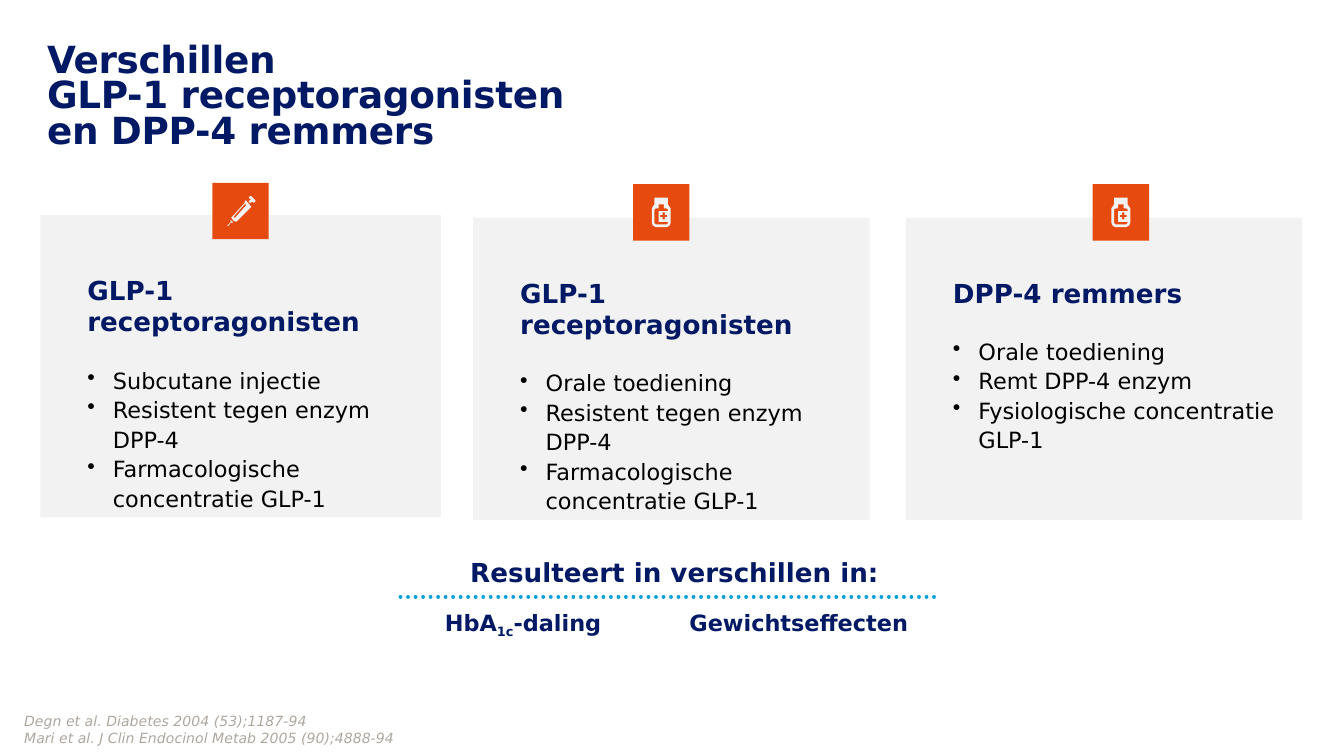
from copy import deepcopy
from dataclasses import dataclass

from lxml.etree import SubElement
from pptx import Presentation
from pptx.dml.color import RGBColor
from pptx.enum.dml import MSO_LINE
from pptx.enum.shapes import MSO_CONNECTOR, MSO_SHAPE
from pptx.enum.text import MSO_ANCHOR, PP_ALIGN
from pptx.oxml.ns import qn
from pptx.util import Inches, Pt

NAVY = RGBColor(0x00, 0x19, 0x65)
ORANGE = RGBColor(0xE6, 0x4A, 0x0E)
LIGHT_GREY = RGBColor(0xF2, 0xF2, 0xF2)
FOOTNOTE_GREY = RGBColor(0xAE, 0xA7, 0x9F)
BLUE = RGBColor(0x00, 0x9F, 0xDA)
BLACK = RGBColor(0x00, 0x00, 0x00)
FONT = "DejaVu Sans"
SLIDE_WIDTH = 10
SLIDE_HEIGHT = SLIDE_WIDTH * 9 / 16
CARD_HEIGHT = 2.25
TILE_SIZE = 0.42

Contour = list[tuple[float, float]]
Icon = list[list[Contour]]

# Icon outlines in hundredths of an inch from the tile's corner;
# each icon is a list of shapes, each shape a list of contours
BOTTLE: Icon = [[
    [(16, 10), (16, 15), (14, 18), (14, 29), (15, 31), (17, 32), (25, 32),
     (27, 31), (28, 29), (28, 18), (26, 15), (26, 10)],
    [(17, 30), (16, 29), (16, 19), (17, 18), (19, 18), (19, 15), (23, 15),
     (23, 18), (25, 18), (26, 19), (26, 20), (19, 20), (19, 28), (26, 28),
     (26, 29), (25, 30)],
    [(20.2, 24.5), (20.2, 22.8), (22, 22.8), (22, 21), (23.7, 21),
     (23.7, 22.8), (25.4, 22.8), (25.4, 24.5), (23.7, 24.5), (23.7, 26.2),
     (22, 26.2), (22, 24.5)],
]]
SYRINGE: Icon = [
    [[(29, 18), (25, 13), (24, 14), (24, 15), (15, 25), (14, 26), (16, 28.5),
      (18, 29), (28, 19)],
     [(16, 26), (17, 26), (25, 17), (25, 16), (24, 16), (16, 25)]],
    [[(28, 12), (29, 12), (27, 14), (28, 15), (30, 14), (31, 15), (32, 14),
      (32, 13), (29, 10), (28, 10), (27, 11)]],
    [[(15, 29), (14, 28), (13, 28), (14, 29), (11, 32), (12, 32), (14, 29.5),
      (15, 30)]],
]


@dataclass
class Card:
    left: float
    top: float
    width: float
    heading: str
    points: list[str]
    icon: Icon
    tile_left: float
    tile_top: float


CARDS = [
    Card(0.3, 1.6, 2.98, "GLP-1 receptoragonisten",
         ["Subcutane injectie", "Resistent tegen enzym DPP-4",
          "Farmacologische concentratie GLP-1"], SYRINGE, 1.58, 1.36),
    Card(3.52, 1.62, 2.95, "GLP-1 receptoragonisten",
         ["Orale toediening", "Resistent tegen enzym DPP-4",
          "Farmacologische concentratie GLP-1"], BOTTLE, 4.71, 1.37),
    Card(6.74, 1.62, 2.95, "DPP-4 remmers",
         ["Orale toediening", "Remt DPP-4 enzym",
          "Fysiologische concentratie GLP-1"], BOTTLE, 8.13, 1.37),
]


def format_runs(paragraph, size: float, color: RGBColor, bold=False, italic=False) -> None:
    for run in paragraph.runs:
        run.font.name = FONT
        run.font.size = Pt(size)
        run.font.bold = bold
        run.font.italic = italic
        run.font.color.rgb = color


def set_margins(text_frame, left=0.0, top=0.0, right=0.0, bottom=0.0) -> None:
    text_frame.word_wrap = True
    text_frame.margin_left, text_frame.margin_top = Inches(left), Inches(top)
    text_frame.margin_right, text_frame.margin_bottom = Inches(right), Inches(bottom)


def add_text(slide, left: float, top: float, width: float, height: float, text: str):
    shape = slide.shapes.add_textbox(Inches(left), Inches(top), Inches(width), Inches(height))
    set_margins(shape.text_frame)
    shape.text_frame.text = text
    return shape.text_frame


def paint(shape, color: RGBColor) -> None:
    shape.fill.solid()
    shape.fill.fore_color.rgb = color
    shape.line.fill.background()
    shape.shadow.inherit = False


def add_rectangle(shapes, left: float, top: float, width: float, height: float, color: RGBColor):
    shape = shapes.add_shape(MSO_SHAPE.RECTANGLE, Inches(left), Inches(top),
                             Inches(width), Inches(height))
    paint(shape, color)
    return shape


def add_bullet(paragraph) -> None:
    properties = paragraph._p.get_or_add_pPr()
    properties.set("marL", str(Inches(0.19)))
    properties.set("indent", str(-Inches(0.19)))
    SubElement(properties, qn("a:buChar")).set("char", "•")


def add_icon(slide, icon: Icon, left: float, top: float) -> None:
    group = slide.shapes.add_group_shape()
    add_rectangle(group.shapes, left, top, TILE_SIZE, TILE_SIZE, ORANGE)
    for contours in icon:
        placed = [[(Inches(left + x / 100), Inches(top + y / 100)) for x, y in contour]
                  for contour in contours]
        builder = group.shapes.build_freeform(*placed[0][0])
        builder.add_line_segments(placed[0][1:], close=True)
        for contour in placed[1:]:
            builder.move_to(*contour[0])
            builder.add_line_segments(contour[1:], close=True)
        paint(builder.convert_to_shape(), LIGHT_GREY)


def add_card(slide, card: Card) -> None:
    shape = add_rectangle(slide.shapes, card.left, card.top, card.width, CARD_HEIGHT, LIGHT_GREY)
    text_frame = shape.text_frame
    set_margins(text_frame, 0.35, 0.44, 0.2, 0)
    text_frame.vertical_anchor = MSO_ANCHOR.TOP
    text_frame.text = "\n".join([card.heading, *card.points])
    heading, *points = text_frame.paragraphs
    heading.alignment = PP_ALIGN.LEFT
    heading.space_after = Pt(14.5)
    format_runs(heading, 14, NAVY, bold=True)
    for paragraph in points:
        paragraph.alignment = PP_ALIGN.LEFT
        paragraph.line_spacing = 1.1
        add_bullet(paragraph)
        format_runs(paragraph, 12, BLACK)
    add_icon(slide, card.icon, card.tile_left, card.tile_top)


def add_title(slide) -> None:
    title = slide.shapes.title
    title.left, title.top = Inches(0.35), Inches(0.33)
    title.width, title.height = Inches(8.72), Inches(0.71)
    set_margins(title.text_frame)
    title.text_frame.vertical_anchor = MSO_ANCHOR.TOP
    title.text_frame.text = "Verschillen\vGLP-1 receptoragonisten\ven DPP-4 remmers"
    paragraph = title.text_frame.paragraphs[0]
    paragraph.alignment = PP_ALIGN.LEFT
    paragraph.line_spacing = 0.8
    format_runs(paragraph, 20, NAVY, bold=True)
    for run in paragraph.runs:
        run._r.rPr.set("spc", "-20")
    # Line breaks take the size of the text around them
    for line_break in paragraph._p.findall(qn("a:br")):
        line_break.append(deepcopy(paragraph.runs[0]._r.rPr))


def add_conclusion(slide) -> None:
    text_frame = add_text(slide, 2.99, 4.13, 4.06, 0.25, "Resulteert in verschillen in:")
    text_frame.vertical_anchor = MSO_ANCHOR.MIDDLE
    text_frame.paragraphs[0].alignment = PP_ALIGN.CENTER
    format_runs(text_frame.paragraphs[0], 14, NAVY, bold=True)

    # Dotted rule
    line = slide.shapes.add_connector(MSO_CONNECTOR.STRAIGHT, Inches(2.98), Inches(4.44),
                                      Inches(6.98), Inches(4.44))
    line.line.color.rgb = BLUE
    line.line.width = Pt(2)
    line.line.dash_style = MSO_LINE.ROUND_DOT
    properties = line._element.spPr
    properties.find(qn("a:ln")).set("cap", "rnd")
    SubElement(properties, qn("a:effectLst"))

    # Two outcomes, set apart by a tab stop
    paragraph = add_text(slide, 3.31, 4.53, 3.7, 0.2, "").paragraphs[0]
    tabs = SubElement(paragraph._p.get_or_add_pPr(), qn("a:tabLst"))
    tab = SubElement(tabs, qn("a:tab"))
    tab.set("pos", str(Inches(1.82)))
    tab.set("algn", "l")
    for text in ("HbA", "1c", "-daling\tGewichtseffecten"):
        paragraph.add_run().text = text
    format_runs(paragraph, 12, NAVY, bold=True)
    paragraph.runs[1]._r.rPr.set("baseline", "-25000")


def main() -> None:
    presentation = Presentation()
    presentation.slide_width = Inches(SLIDE_WIDTH)
    presentation.slide_height = Inches(SLIDE_HEIGHT)
    slide = presentation.slides.add_slide(presentation.slide_layouts[5])
    add_title(slide)
    for card in CARDS:
        add_card(slide, card)
    add_conclusion(slide)

    # References
    references = add_text(slide, 0.18, 5.3, 9, 0.25,
                          "Degn et al. Diabetes 2004 (53);1187-94\n"
                          "Mari et al. J Clin Endocinol Metab 2005 (90);4888-94")
    for paragraph in references.paragraphs:
        format_runs(paragraph, 7.5, FOOTNOTE_GREY, italic=True)
    presentation.save("out.pptx")


if __name__ == "__main__":
    main()
